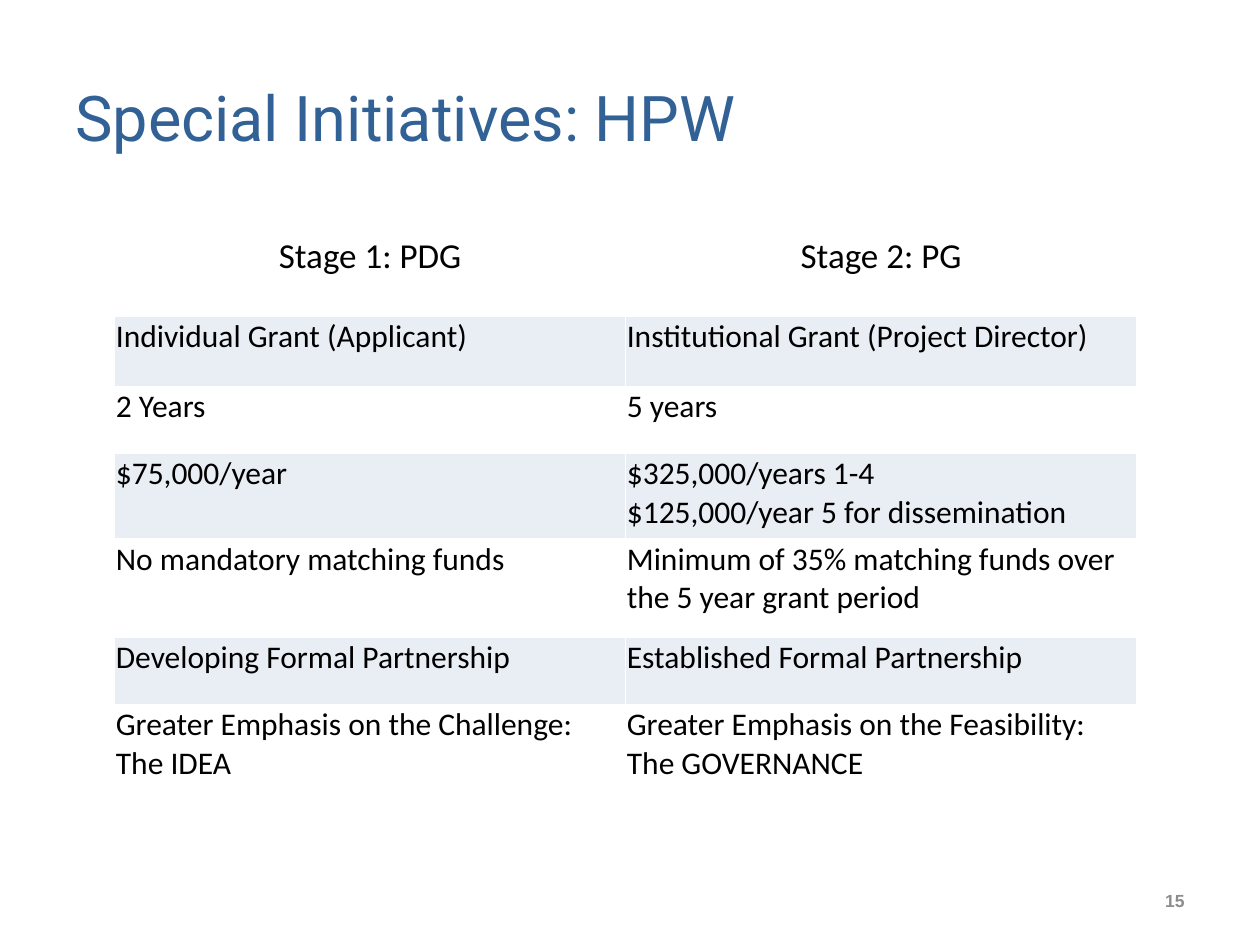
from pptx import Presentation
from pptx.dml.color import RGBColor
from pptx.enum.text import MSO_ANCHOR, PP_ALIGN
from pptx.oxml import parse_xml
from pptx.oxml.ns import nsdecls
from pptx.util import Pt

BLUE = RGBColor(0x32, 0x61, 0x95)
GRAY = RGBColor(0x8C, 0x8C, 0x8C)
BLACK = RGBColor(0, 0, 0)
BAND = RGBColor(0xE9, 0xED, 0xF4)

TITLE = "Special Initiatives: HPW"
NUMBER = "15"
# Row height, stage 1 text, stage 2 text
ROWS = [
    (69.1, "Stage 1: PDG", "Stage 2: PG"),
    (40.3, "Individual Grant (Applicant)", "Institutional Grant (Project Director)"),
    (38.2, "2 Years", "5 years"),
    (49, "$75,000/year", "$325,000/years 1-4\n$125,000/year 5 for dissemination"),
    (56.2, "No mandatory matching funds",
     "Minimum of 35% matching funds over the 5 year grant period"),
    (38.2, "Developing Formal Partnership", "Established Formal Partnership"),
    (46.8, "Greater Emphasis on the Challenge: The IDEA",
     "Greater Emphasis on the Feasibility: The GOVERNANCE"),
]
LEFT, TOP, WIDE = 65.5, 111.6, 292


def write(frame, text, font, size, color, bold=False, align=PP_ALIGN.LEFT):
    para = frame.paragraphs[0]
    para.alignment = align
    for i, line in enumerate(text.split("\n")):
        if i:
            para.add_line_break()
        run = para.add_run()
        run.text = line
        run.font.name = font
        run.font.size = Pt(size)
        run.font.bold = bold
        run.font.color.rgb = color


def add_label(slide, box, *style, **more):
    frame = slide.shapes.add_textbox(*map(Pt, box)).text_frame
    frame.word_wrap = True
    frame.vertical_anchor = MSO_ANCHOR.MIDDLE
    write(frame, *style, **more)


def add_edges(cell):
    """Draw thin white borders; they must come before the cell's fill."""
    props = cell._tc.get_or_add_tcPr()
    for i, side in enumerate(("lnL", "lnR", "lnT", "lnB")):
        props.insert(i, parse_xml(
            f'<a:{side} {nsdecls("a")} w="12700"><a:solidFill>'
            f'<a:srgbClr val="FFFFFF"/></a:solidFill></a:{side}>'))


def fill_cell(cell, text, row):
    cell.margin_left = cell.margin_right = cell.margin_top = Pt(0.72)
    cell.margin_bottom = Pt(0)
    if row % 2:
        cell.fill.solid()
        cell.fill.fore_color.rgb = BAND
    else:
        cell.fill.background()
    add_edges(cell)
    head = row == 0
    cell.vertical_anchor = MSO_ANCHOR.MIDDLE if head else MSO_ANCHOR.TOP
    write(cell.text_frame, text, "Calibri", 20 if head else 18, BLACK,
          align=PP_ALIGN.CENTER if head else PP_ALIGN.LEFT)


def add_stages(slide):
    tall = sum(row[0] for row in ROWS)
    table = slide.shapes.add_table(
        len(ROWS), 2, Pt(LEFT), Pt(TOP), Pt(2 * WIDE), Pt(tall)).table
    for col in table.columns:
        col.width = Pt(WIDE)
    for r, (high, *texts) in enumerate(ROWS):
        table.rows[r].height = Pt(high)
        for c, text in enumerate(texts):
            fill_cell(table.cell(r, c), text, r)


def main():
    deck = Presentation()
    deck.slide_width, deck.slide_height = Pt(720), Pt(540)
    slide = deck.slides.add_slide(deck.slide_layouts[6])
    add_label(slide, (36, 21.6, 648, 90), TITLE, "Roboto", 36, BLUE)
    add_label(slide, (632, 500.4, 52, 28.8), NUMBER, "Arial", 10, GRAY,
              bold=True, align=PP_ALIGN.RIGHT)
    add_stages(slide)
    deck.save("out.pptx")


if __name__ == "__main__":
    main()
